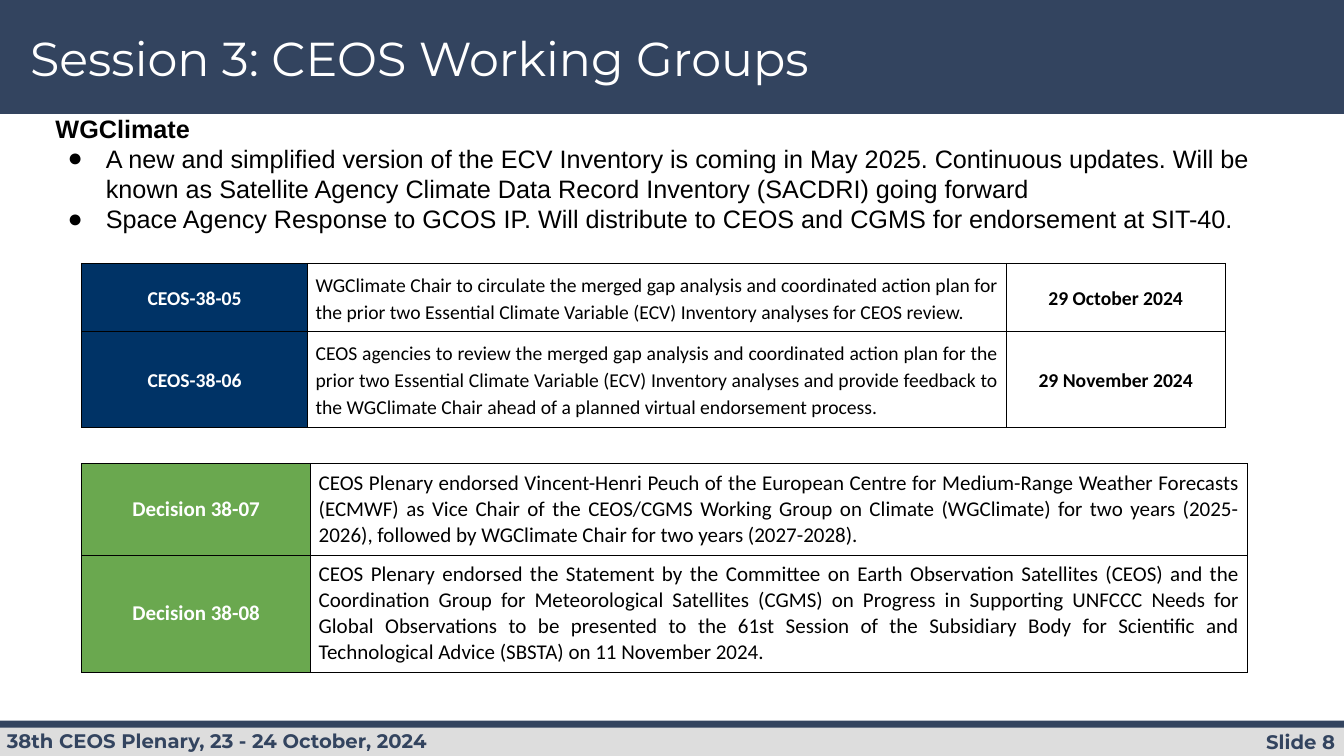
from lxml.etree import SubElement
from pptx import Presentation
from pptx.dml.color import RGBColor
from pptx.enum.shapes import MSO_SHAPE
from pptx.enum.text import MSO_ANCHOR as Anchor, MSO_AUTO_SIZE as AutoSize, PP_ALIGN as Align
from pptx.oxml.ns import qn
from pptx.util import Inches, Pt

NAVY, GREY, WHITE, BLACK = "33445F", "DDDDDD", "FFFFFF", "000000"
ACTION_BLUE, DECISION_GREEN = "003366", "6AA84F"


def rgb(value):
    return RGBColor.from_string(value)


def assign(target, values):
    for name, value in values.items():
        setattr(target, name, value)


class SlideBuilder:
    heading_font = "Montserrat"
    body_font = "Arial"
    table_font = "Calibri"
    cell_format = {
        "vertical_anchor": Anchor.MIDDLE,
        "margin_left": Inches(0.08), "margin_right": Inches(0.08),
        "margin_top": Inches(0.07), "margin_bottom": Inches(0.07),
    }

    def __init__(self, deck):
        self.width, self.height = deck.slide_width, deck.slide_height
        self.slide = deck.slides.add_slide(deck.slide_layouts[1])
        self.shapes = self.slide.shapes

    def across(self, percent):
        return round(self.width * percent / 100)

    def down(self, percent):
        return round(self.height * percent / 100)

    def box(self, left, top, width, height):
        return self.across(left), self.down(top), self.across(width), self.down(height)

    def fill_paragraph(self, paragraph, text, face, size, color, bold=False, **layout):
        assign(paragraph, {"space_before": Pt(0), "line_spacing": 1.0} | layout)
        run = paragraph.add_run()
        run.text = text
        assign(run.font, {"name": face, "size": Pt(size), "bold": bold})
        run.font.color.rgb = rgb(color)

    def frame(self, shape, side, edge):
        frame = shape.text_frame
        assign(frame, {
            "word_wrap": True, "auto_size": AutoSize.NONE, "vertical_anchor": Anchor.TOP,
            "margin_left": Inches(side), "margin_right": Inches(side),
            "margin_top": Inches(edge), "margin_bottom": Inches(edge),
        })
        return frame

    def place(self, shape, *area):
        assign(shape, dict(zip(("left", "top", "width", "height"), self.box(*area))))

    def band(self, color, *area):
        band = self.shapes.add_shape(MSO_SHAPE.RECTANGLE, *self.box(*area))
        band.shadow.inherit = False
        band.fill.solid()
        band.fill.fore_color.rgb = rgb(color)
        band.line.fill.background()
        self.shapes.title._element.addprevious(band._element)

    def footer(self, text, align, *area):
        frame = self.frame(self.shapes.add_textbox(*self.box(*area)), 0.1, 0.05)
        self.fill_paragraph(frame.paragraphs[0], text, self.heading_font, 14, NAVY, True,
                            alignment=align)

    def title(self, text, *area):
        self.place(self.shapes.title, *area)
        frame = self.frame(self.shapes.title, 0.1, 0.05)
        self.fill_paragraph(frame.paragraphs[0], text, self.heading_font, 34, WHITE,
                            alignment=Align.LEFT)

    def topics(self, heading, points, *area):
        body = self.slide.placeholders[1]
        self.place(body, *area)
        frame = self.frame(body, 0.1, 0.1)
        first = frame.paragraphs[0]
        SubElement(self.indent(first, 0, 0), qn("a:buNone"))
        self.fill_paragraph(first, heading, self.body_font, 18, BLACK, True)
        for point in points:
            paragraph = frame.add_paragraph()
            properties = self.indent(paragraph, 0.5, -0.38)
            bullet_color = SubElement(properties, qn("a:buClr"))
            SubElement(bullet_color, qn("a:srgbClr"), val=BLACK)
            SubElement(properties, qn("a:buFont"), typeface=self.body_font)
            SubElement(properties, qn("a:buChar"), char="●")
            self.fill_paragraph(paragraph, point, self.body_font, 18, BLACK)

    def indent(self, paragraph, margin, first_line):
        properties = paragraph._p.get_or_add_pPr()
        properties.set("marL", str(Inches(margin)))
        properties.set("indent", str(Inches(first_line)))
        return properties

    def borders(self, cell):
        properties = cell._tc.get_or_add_tcPr()
        for side in ("a:lnL", "a:lnR", "a:lnT", "a:lnB"):
            line = SubElement(properties, qn(side), w=str(Pt(0.5)))
            SubElement(SubElement(line, qn("a:solidFill")), qn("a:srgbClr"), val=BLACK)

    def table(self, records, left, top, widths, heights, label_fill, size, spacing):
        area = self.box(left, top, sum(widths), sum(heights))
        table = self.shapes.add_table(len(heights), len(widths), *area).table
        assign(table, {"first_row": False, "horz_banding": False})
        for column, width in zip(table.columns, widths):
            column.width = self.across(width)
        for row, height, record in zip(table.rows, heights, records):
            row.height = self.down(height)
            for index, (cell, text) in enumerate(zip(row.cells, record)):
                is_label, is_statement = index == 0, index == 1
                assign(cell, self.cell_format)
                self.borders(cell)
                cell.fill.solid()
                cell.fill.fore_color.rgb = rgb(label_fill if is_label else WHITE)
                self.fill_paragraph(cell.text_frame.paragraphs[0], text, self.table_font, size,
                                    WHITE if is_label else BLACK, not is_statement,
                                    alignment=Align.JUSTIFY if is_statement else Align.CENTER,
                                    line_spacing=spacing)


def main():
    deck = Presentation()
    assign(deck, {"slide_width": Inches(13.33), "slide_height": Inches(7.5)})
    page = SlideBuilder(deck)

    page.band(NAVY, 0, 0, 100, 15.07)
    page.band(GREY, 0, 95.87, 100, 4.13)
    page.band(NAVY, 0, 95.33, 100, 0.93)
    page.footer("Slide 8", Align.RIGHT, 84.25, 95.87, 15.83, 4.53)
    page.footer("38th CEOS Plenary, 23 - 24 October, 2024", Align.LEFT, -0.23, 95.73, 48.24, 4.53)

    page.title("Session 3: CEOS Working Groups", 1.5, 3.2, 71.12, 8.93)
    page.topics("WGClimate", [
        "A new and simplified version of the ECV Inventory is coming in May 2025. Continuous updates. "
        "Will be known as Satellite Agency Climate Data Record Inventory (SACDRI) going forward",
        "Space Agency Response to GCOS IP. Will distribute to CEOS and CGMS for endorsement at SIT-40.",
    ], 3.38, 13.6, 93.25, 75.6)

    actions = [
        ("CEOS-38-05",
         "WGClimate Chair to circulate the merged gap analysis and coordinated action plan for the prior "
         "two Essential Climate Variable (ECV) Inventory analyses for CEOS review.",
         "29 October 2024"),
        ("CEOS-38-06",
         "CEOS agencies to review the merged gap analysis and coordinated action plan for the prior two "
         "Essential Climate Variable (ECV) Inventory analyses and provide feedback to the WGClimate Chair "
         "ahead of a planned virtual endorsement process.",
         "29 November 2024"),
    ]
    decisions = [
        ("Decision 38-07",
         "CEOS Plenary endorsed Vincent-Henri Peuch of the European Centre for Medium-Range Weather "
         "Forecasts (ECMWF) as Vice Chair of the CEOS/CGMS Working Group on Climate (WGClimate) for two "
         "years (2025-2026), followed by WGClimate Chair for two years (2027-2028)."),
        ("Decision 38-08",
         "CEOS Plenary endorsed the Statement by the Committee on Earth Observation Satellites (CEOS) and "
         "the Coordination Group for Meteorological Satellites (CGMS) on Progress in Supporting UNFCCC "
         "Needs for Global Observations to be presented to the 61st Session of the Subsidiary Body for "
         "Scientific and Technological Advice (SBSTA) on 11 November 2024."),
    ]
    page.table(actions, 6.08, 34.8, (16.8, 52, 16.28), (8.8, 12.4), ACTION_BLUE, 14, 1.14)
    page.table(decisions, 6.08, 61.33, (17.03, 69.7), (11.9, 15.2), DECISION_GREEN, 15, 1.0)

    deck.save("out.pptx")


if __name__ == "__main__":
    main()
